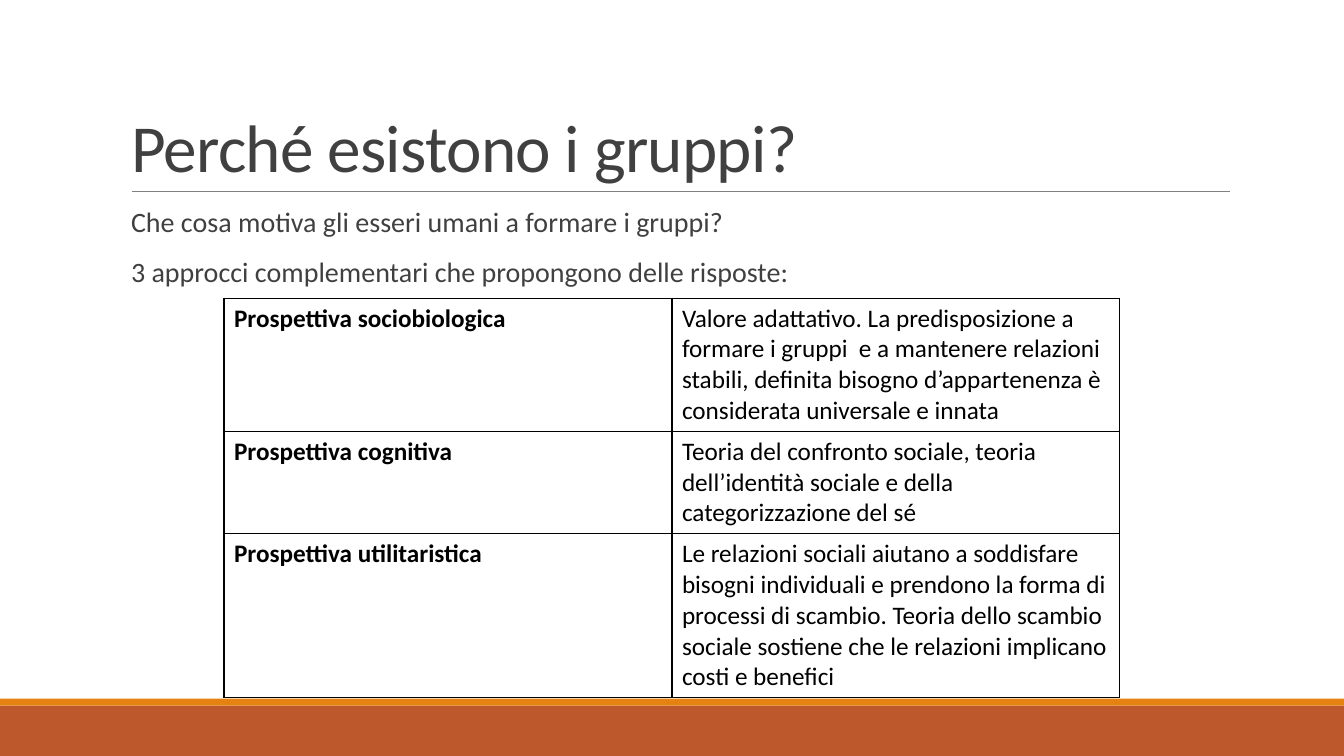
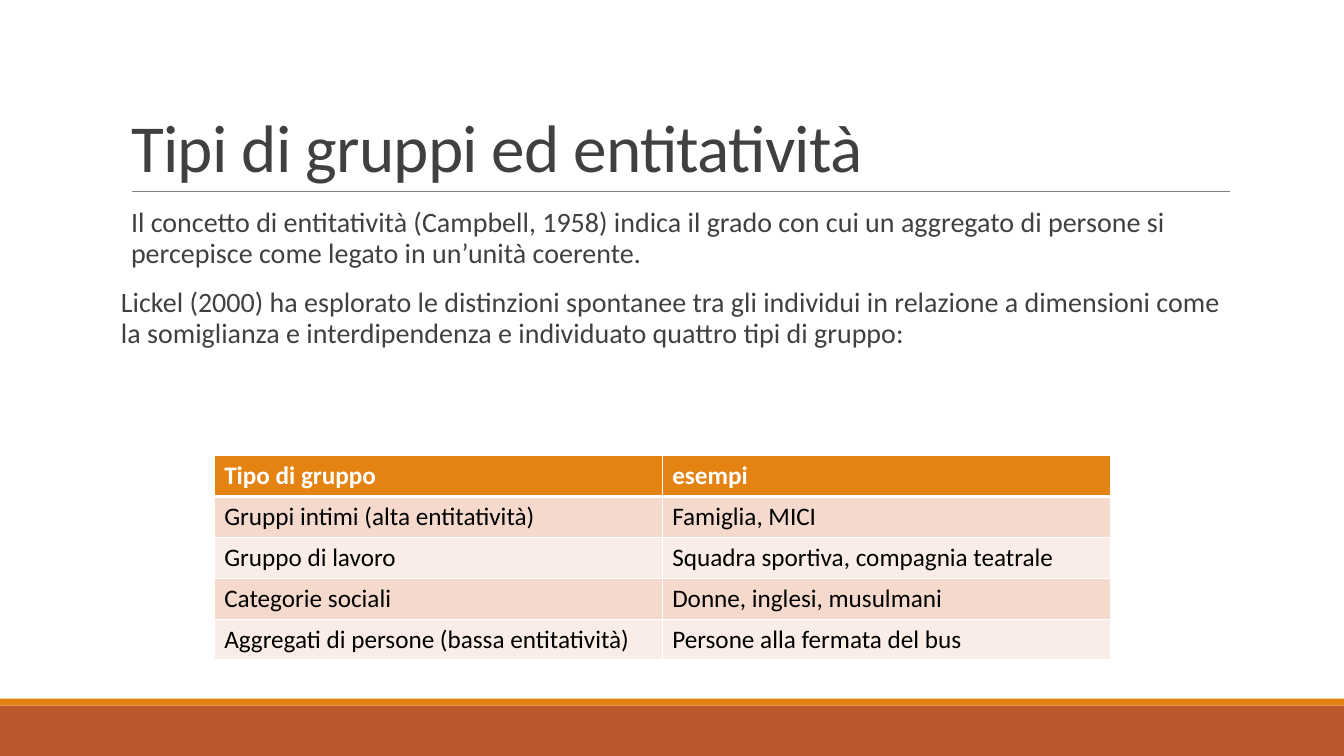
"""Build two slides on why groups exist and which types there are."""
from pptx import Presentation
from pptx import util as u
from pptx.dml.color import RGBColor
from pptx.enum import shapes, text
from pptx.oxml import parse_xml
from pptx.oxml.ns import nsdecls

Pt = u.Pt
FONT = "Calibri"
HEX = {"band": "BD582C", "strip": "E48312", "rule": "808080", "ink": "404040",
       "black": "000000", "white": "FFFFFF", "odd": "F5D9CC", "even": "FAEDE7"}
WIDE, HIGH = 960, 540
LEFT, SPAN = 86.4, 792
COL = 320

SLIDES = [
    {"title": "Perché esistono i gruppi?",
     "body": [("Che cosa motiva gli esseri umani a formare i gruppi?", 7.2),
              ("3 approcci complementari che propongono delle risposte:", 7.2)],
     "table": {
         "at": (160, 213), "rows": [95, 73, 117], "head": False, "edge": "black",
         "cells": [
             ("Prospettiva sociobiologica",
              "Valore adattativo. La predisposizione a formare i gruppi  e a mantenere "
              "relazioni stabili, definita bisogno d’appartenenza è considerata "
              "universale e innata"),
             ("Prospettiva cognitiva",
              "Teoria del confronto sociale, teoria dell’identità sociale e della "
              "categorizzazione del sé"),
             ("Prospettiva utilitaristica",
              "Le relazioni sociali aiutano a soddisfare bisogni individuali e prendono "
              "la forma di processi di scambio. Teoria dello scambio sociale sostiene "
              "che le relazioni implicano costi e benefici")]}},
    {"title": "Tipi di gruppi ed entitatività",
     "body": [("Il concetto di entitatività (Campbell, 1958) indica il grado con cui un "
               "aggregato di persone si percepisce come legato in un’unità coerente.", 7.2),
              ("Lickel (2000) ha esplorato le distinzioni spontanee tra gli individui in "
               "relazione a dimensioni come la somiglianza e interdipendenza e "
               "individuato quattro tipi di gruppo:", 0)],
     "table": {
         "at": (153, 325.5), "rows": [29.2] * 5, "head": True, "edge": "white",
         "cells": [
             ("Tipo di gruppo", "esempi"),
             ("Gruppi intimi (alta entitatività)", "Famiglia, MICI"),
             ("Gruppo di lavoro", "Squadra sportiva, compagnia teatrale"),
             ("Categorie sociali", "Donne, inglesi, musulmani"),
             ("Aggregati di persone (bassa entitatività)",
              "Persone alla fermata del bus")]}},
]


def tint(name):
    return RGBColor.from_string(HEX[name])


def write(para, words, size, color, bold=False):
    run = para.add_run()
    run.text = words
    font = run.font
    font.name, font.size, font.bold = FONT, Pt(size), bold
    font.color.rgb = tint(color)
    return run


def place(shape, left, top, width, height):
    shape.left, shape.top = Pt(left), Pt(top)
    shape.width, shape.height = Pt(width), Pt(height)


def add_frame(slide):
    for name, top, height in (("band", 504, 36), ("strip", 499, 5)):
        bar = slide.shapes.add_shape(shapes.MSO_SHAPE.RECTANGLE, 0, Pt(top),
                                     Pt(WIDE), Pt(height))
        bar.shadow.inherit = False
        bar.fill.solid()
        bar.fill.fore_color.rgb = tint(name)
        bar.line.fill.background()
    rule = slide.shapes.add_connector(shapes.MSO_CONNECTOR.STRAIGHT, Pt(94.2),
                                      Pt(136.8), Pt(878.8), Pt(136.8))
    rule.line.color.rgb = tint("rule")
    rule.line.width = Pt(0.5)
    rule._element.spPr.append(parse_xml(f"<a:effectLst {nsdecls('a')}/>"))


def add_title(slide, words):
    title = slide.shapes.title
    place(title, LEFT, 22.5, SPAN, 114.3)
    frame = title.text_frame
    frame.auto_size = text.MSO_AUTO_SIZE.NONE
    frame.vertical_anchor = text.MSO_ANCHOR.BOTTOM
    para = frame.paragraphs[0]
    para.alignment = text.PP_ALIGN.LEFT
    para.line_spacing = 0.85
    run = write(para, words, 48, "ink")
    run._r.get_or_add_rPr().set("spc", "-50")


def add_body(slide, items):
    body = slide.placeholders[1]
    place(body, LEFT, 145.4, SPAN, 316.8)
    frame = body.text_frame
    frame.auto_size = text.MSO_AUTO_SIZE.NONE
    frame.margin_left = frame.margin_right = 0
    for i, (words, inset) in enumerate(items):
        para = frame.add_paragraph() if i else frame.paragraphs[0]
        para.line_spacing = 0.9
        para.space_before, para.space_after = Pt(12), Pt(2)
        props = para._p.get_or_add_pPr()
        props.set("marL", str(Pt(inset)))
        props.set("indent", "0")
        props.append(parse_xml(f"<a:buNone {nsdecls('a')}/>"))
        write(para, words, 20, "ink")


def set_edges(cell, color, base):
    props = cell._tc.get_or_add_tcPr()
    for side, width in (("L", 1), ("R", 1), ("T", 1), ("B", base)):
        props.append(parse_xml(
            f'<a:ln{side} {nsdecls("a")} w="{Pt(width)}"><a:solidFill>'
            f'<a:srgbClr val="{HEX[color]}"/></a:solidFill></a:ln{side}>'))


def add_grid(slide, data):
    rows, cells, head = data["rows"], data["cells"], data["head"]
    left, top = data["at"]
    table = slide.shapes.add_table(len(rows), 2, Pt(left), Pt(top), Pt(2 * COL),
                                   Pt(sum(rows))).table
    table.first_row = table.horz_banding = head
    for col in table.columns:
        col.width = Pt(COL)
    for r, (height, line) in enumerate(zip(rows, cells)):
        table.rows[r].height = Pt(height)
        top_row = head and r == 0
        for c, words in enumerate(line):
            cell = table.cell(r, c)
            set_edges(cell, data["edge"], 3 if top_row else 1)
            if head:
                cell.fill.solid()
                shade = "strip" if top_row else ("odd" if r % 2 else "even")
                cell.fill.fore_color.rgb = tint(shade)
            else:
                cell.fill.background()
            write(cell.text_frame.paragraphs[0], words, 18,
                  "white" if top_row else "black",
                  top_row if head else c == 0)


def main():
    deck = Presentation()
    deck.slide_width, deck.slide_height = Pt(WIDE), Pt(HIGH)
    for data in SLIDES:
        slide = deck.slides.add_slide(deck.slide_layouts[1])
        add_frame(slide)
        add_title(slide, data["title"])
        add_body(slide, data["body"])
        add_grid(slide, data["table"])
    deck.save("out.pptx")


if __name__ == "__main__":
    main()
